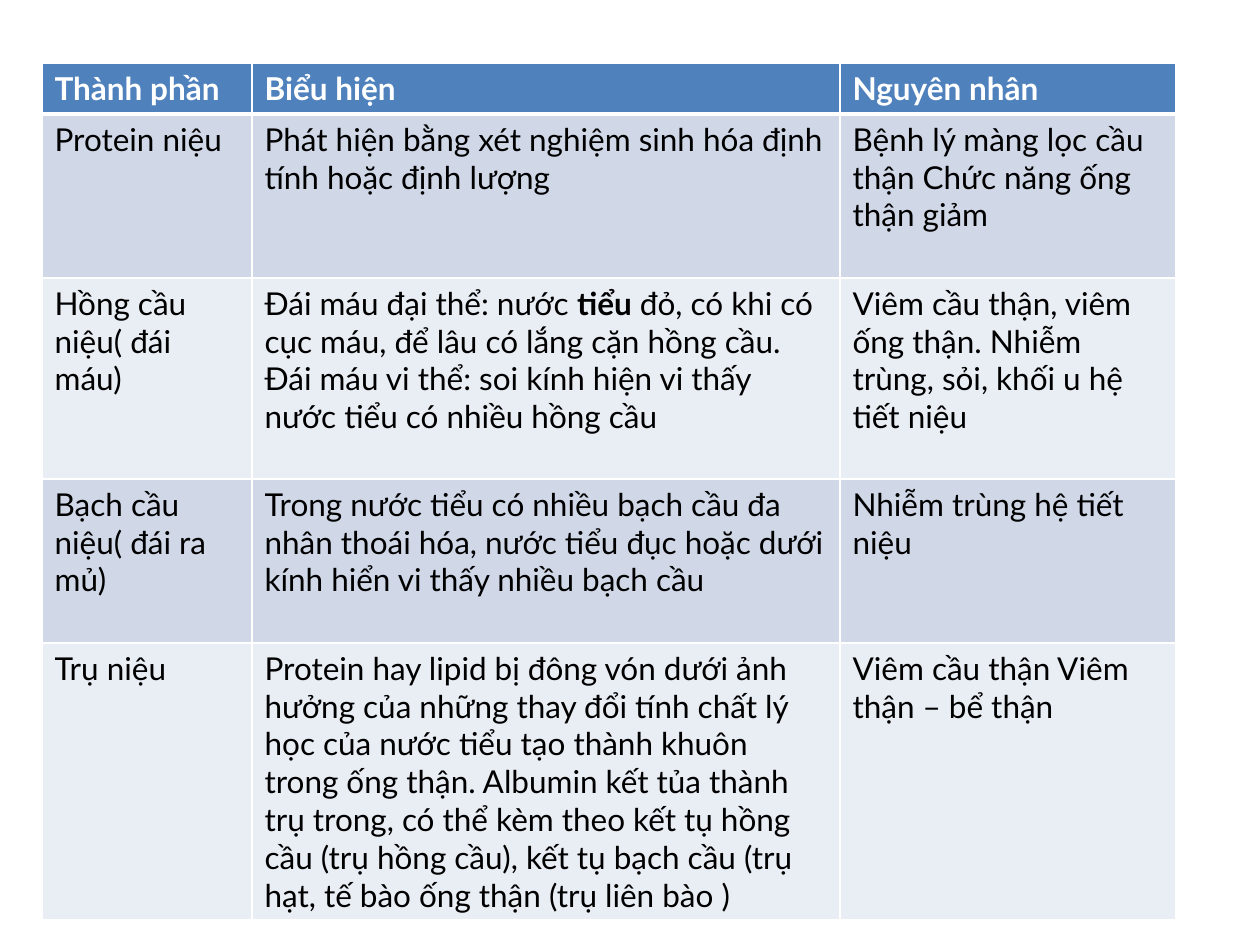
from dataclasses import dataclass

from lxml import etree
from pptx import Presentation
from pptx.dml.color import RGBColor
from pptx.oxml.ns import qn
from pptx.util import Emu, Pt

# Content: each cell is a list of (text, bold) runs
HEADER = ["Thành phần", "Biểu hiện", "Nguyên nhân"]
ROWS = [
    ["Protein niệu",
     "Phát hiện bằng xét nghiệm sinh hóa định tính hoặc định lượng",
     "Bệnh lý màng lọc cầu thận Chức năng ống thận giảm"],
    ["Hồng cầu niệu( đái máu)",
     [("Đái máu đại thể: nước ", False), ("tiểu", True),
      (" đỏ, có khi có cục máu, để lâu có lắng cặn hồng cầu. Đái máu vi thể: "
       "soi kính hiện vi thấy nước tiểu có nhiều hồng cầu", False)],
     "Viêm cầu thận, viêm ống thận. Nhiễm trùng, sỏi, khối u hệ tiết niệu"],
    ["Bạch cầu niệu( đái ra mủ)",
     "Trong nước tiểu có nhiều bạch cầu đa nhân thoái hóa, nước tiểu đục hoặc "
     "dưới kính hiển vi thấy nhiều bạch cầu",
     "Nhiễm trùng hệ tiết niệu"],
    ["Trụ niệu",
     "Protein hay lipid bị đông vón dưới ảnh hưởng của những thay đổi tính chất "
     "lý học của nước tiểu tạo thành khuôn trong ống thận. Albumin kết tủa thành "
     "trụ trong, có thể kèm theo kết tụ hồng cầu (trụ hồng cầu), kết tụ bạch cầu "
     "(trụ hạt, tế bào ống thận (trụ liên bào )",
     "Viêm cầu thận Viêm thận – bể thận"],
]

# Layout in px
PX = 914400 // 126
SLIDE_W, SLIDE_H = 1260, 945
LEFT, TOP = 42, 63
COL_WIDTHS = [210, 588, 336]
ROW_HEIGHTS = [51, 164, 201, 164, 277]


@dataclass(frozen=True)
class Theme:
    font: str = "Lato"
    size: int = 18
    header_fill: str = "4F81BD"
    bands: tuple = ("D0D8E8", "E9EDF4")
    header_text: str = "FFFFFF"
    body_text: str = "000000"
    border: str = "FFFFFF"
    border_pt: int = 1
    rule_pt: int = 3


THEME = Theme()


def px(n):
    return Emu(n * PX)


def set_borders(cell, top_pt, bottom_pt):
    tc_pr = cell._tc.get_or_add_tcPr()
    widths = {"L": THEME.border_pt, "R": THEME.border_pt, "T": top_pt, "B": bottom_pt}
    for i, (side, width) in enumerate(widths.items()):
        ln = etree.Element(qn(f"a:ln{side}"), w=str(Pt(width)))
        fill = etree.SubElement(ln, qn("a:solidFill"))
        etree.SubElement(fill, qn("a:srgbClr"), val=THEME.border)
        tc_pr.insert(i, ln)


def fill_cell(cell, runs, fill, color):
    cell.fill.solid()
    cell.fill.fore_color.rgb = RGBColor.from_string(fill)
    p = cell.text_frame.paragraphs[0]
    for text, bold in runs:
        r = p.add_run()
        r.text = text
        r.font.name = THEME.font
        r.font.size = Pt(THEME.size)
        r.font.bold = bold
        r.font.color.rgb = RGBColor.from_string(color)


prs = Presentation()
prs.slide_width, prs.slide_height = px(SLIDE_W), px(SLIDE_H)
slide = prs.slides.add_slide(prs.slide_layouts[6])

# Table grid
data = [HEADER] + ROWS
table = slide.shapes.add_table(
    len(data), len(HEADER), px(LEFT), px(TOP),
    px(sum(COL_WIDTHS)), px(sum(ROW_HEIGHTS))).table
for column, width in zip(table.columns, COL_WIDTHS):
    column.width = px(width)
for row, height in zip(table.rows, ROW_HEIGHTS):
    row.height = px(height)

# Cells: header row, then alternating bands
for i, values in enumerate(data):
    is_header = i == 0
    fill = THEME.header_fill if is_header else THEME.bands[(i - 1) % 2]
    color = THEME.header_text if is_header else THEME.body_text
    top_pt = THEME.rule_pt if i == 1 else THEME.border_pt
    bottom_pt = THEME.rule_pt if is_header else THEME.border_pt
    for j, value in enumerate(values):
        runs = [(value, is_header)] if isinstance(value, str) else value
        cell = table.cell(i, j)
        fill_cell(cell, runs, fill, color)
        set_borders(cell, top_pt, bottom_pt)

prs.save("out.pptx")
